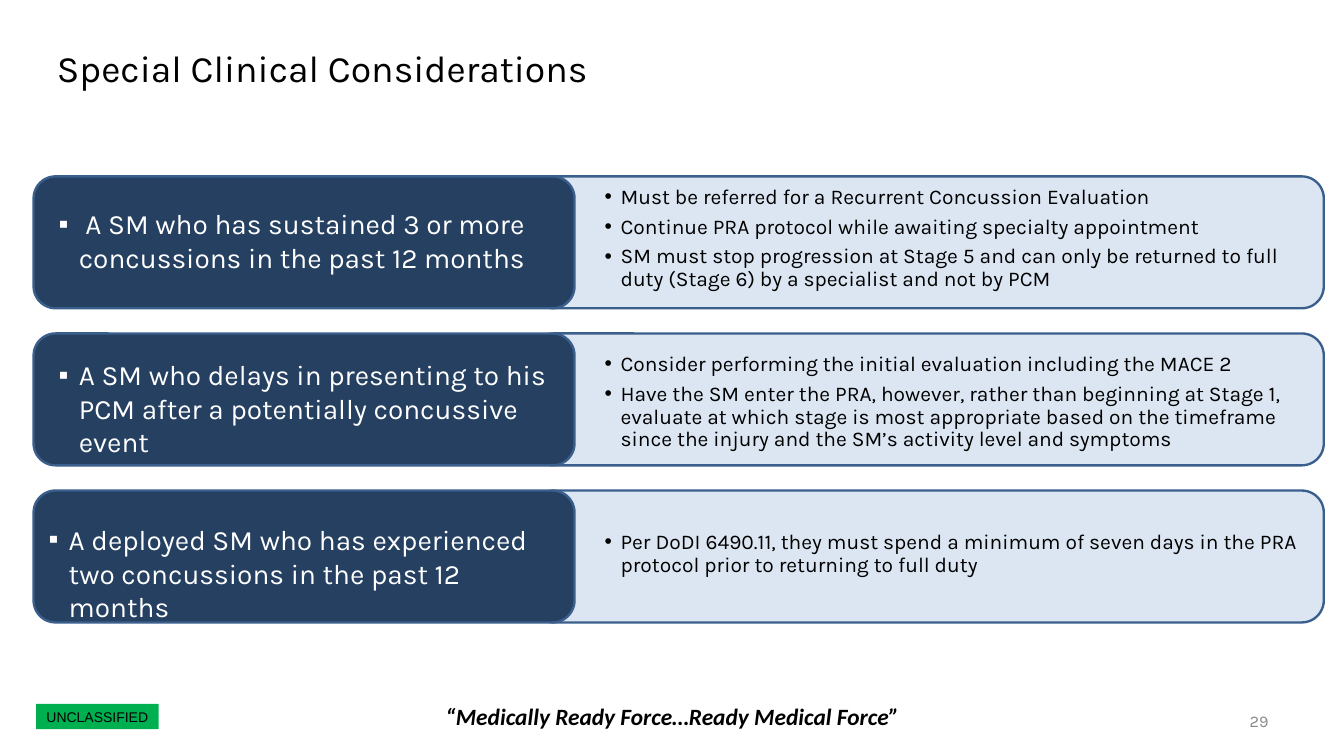
from lxml.etree import SubElement
from pptx import Presentation
from pptx.dml.color import RGBColor
from pptx.enum.shapes import MSO_SHAPE as Shape
from pptx.enum.text import MSO_ANCHOR as Anchor, PP_ALIGN as Align
from pptx.oxml.ns import qn
from pptx.util import Inches, Pt

COLORS = {
    "black": "000000", "white": "FFFFFF", "gray": "898989", "green": "00B050",
    "navy": "254061", "pale": "DCE6F2", "outline": "3A5F8C",
}
TITLE = "Special Clinical Considerations"
BANNER = "UNCLASSIFIED"
MOTTO = "“Medically Ready Force…Ready Medical Force”"
PAGE_NUMBER = "29"

# Each case: situation, (left, top, height) of its text, guidance, (top, height) of its text
CASES = [
    (" A SM who has sustained 3 or more concussions in the past 12 months",
     (0.4, 2.41, 1.11),
     ["Must be referred for a Recurrent Concussion Evaluation",
      "Continue PRA protocol while awaiting specialty appointment",
      "SM must stop progression at Stage 5 and can only be returned to full duty "
      "(Stage 6) by a specialist and not by PCM"],
     (2.17, 1.48)),
    ("A SM who delays in presenting to his PCM after a potentially concussive event",
     (0.4, 4.21, 1.39),
     ["Consider performing the initial evaluation including the MACE 2",
      "Have the SM enter the PRA, however, rather than beginning at Stage 1, evaluate "
      "at which stage is most appropriate based on the timeframe since the injury and "
      "the SM’s activity level and symptoms"],
     (4.16, 1.43)),
    ("A deployed SM who has experienced two concussions in the past 12 months",
     (0.28, 6.17, 1.48),
     ["Per DoDI 6490.11, they must spend a minimum of seven days in the PRA protocol "
      "prior to returning to full duty"],
     (6.28, 0.87)),
]
FIRST_ROW, ROW_PITCH, CARD_HEIGHT = 2.1, 1.87, 1.57
SITUATION_LEFT, SITUATION_WIDTH = 0.4, 6.44
GUIDANCE_LEFT, GUIDANCE_WIDTH = 6.33, 9.43
GUIDANCE_TEXT_LEFT, GUIDANCE_TEXT_WIDTH = 7.1, 8.67


def color(name):
    return RGBColor.from_string(COLORS[name])


def add_panel(slide, kind, box, fill, outline=None):
    shape = slide.shapes.add_shape(kind, *map(Inches, box))
    shape.shadow.inherit = False
    shape.fill.solid()
    shape.fill.fore_color.rgb = color(fill)
    if outline:
        shape.line.color.rgb = color(outline)
        shape.line.width = Pt(2)
    else:
        shape.line.fill.background()
    return shape


def set_bullet(paragraph, symbol, margin, hanging):
    properties = paragraph._p.get_or_add_pPr()
    properties.set("marL", str(Inches(margin)))
    properties.set("indent", str(-Inches(hanging)))
    SubElement(properties, qn("a:buFont"), typeface="Arial")
    SubElement(properties, qn("a:buChar"), char=symbol)


def write(shape, lines, size, ink="black", font="Karla", align=Align.LEFT,
          anchor=Anchor.TOP, bullet=None, spacing=None, after=0, emphasis=False):
    """Fill a shape with paragraphs; bullet is (symbol, margin, hanging)."""
    frame = shape.text_frame
    frame.word_wrap = True
    frame.vertical_anchor = anchor
    for index, line in enumerate(lines):
        paragraph = frame.add_paragraph() if index else frame.paragraphs[0]
        paragraph.alignment = align
        paragraph.line_spacing = spacing
        paragraph.space_after = Pt(after)
        if bullet:
            set_bullet(paragraph, *bullet)
        run = paragraph.add_run()
        run.text = line
        run.font.name = font
        run.font.size = Pt(size)
        run.font.bold = run.font.italic = emphasis
        run.font.color.rgb = color(ink)


def add_text(slide, box, lines, size, **style):
    write(slide.shapes.add_textbox(*map(Inches, box)), lines, size, **style)


def add_case(slide, row, situation, situation_place, guidance, guidance_place):
    top = FIRST_ROW + row * ROW_PITCH
    add_panel(slide, Shape.ROUNDED_RECTANGLE,
              (GUIDANCE_LEFT, top, GUIDANCE_WIDTH, CARD_HEIGHT), "pale", "outline")
    add_panel(slide, Shape.ROUNDED_RECTANGLE,
              (SITUATION_LEFT, top, SITUATION_WIDTH, CARD_HEIGHT), "navy", "outline")
    text_left, text_top, text_height = situation_place
    add_text(slide, (text_left, text_top, SITUATION_WIDTH, text_height), [situation], 24,
             ink="white", bullet=("▪", 0.44, 0.24))
    text_top, text_height = guidance_place
    add_text(slide, (GUIDANCE_TEXT_LEFT, text_top, GUIDANCE_TEXT_WIDTH, text_height),
             guidance, 18, bullet=("•", 0.19, 0.19), spacing=0.9, after=6)


def main():
    presentation = Presentation()
    presentation.slide_width, presentation.slide_height = Inches(16), Inches(9)
    slide = presentation.slides.add_slide(presentation.slide_layouts[6])

    banner = add_panel(slide, Shape.RECTANGLE, (0.43, 8.38, 1.46, 0.3), "green")
    write(banner, [BANNER], 12, font="Arial", align=Align.CENTER, anchor=Anchor.MIDDLE)
    add_text(slide, (4.88, 8.33, 6.25, 0.4), [MOTTO], 20, font="Calibri",
             align=Align.CENTER, anchor=Anchor.MIDDLE, emphasis=True)
    add_text(slide, (0.58, 0.49, 11.87, 1.19), [TITLE], 32)
    for row, case in enumerate(CASES):
        add_case(slide, row, *case)
    add_text(slide, (13.33, 8.34, 1.87, 0.48), [PAGE_NUMBER], 14, ink="gray",
             align=Align.RIGHT, anchor=Anchor.MIDDLE)

    presentation.save("out.pptx")


if __name__ == "__main__":
    main()
